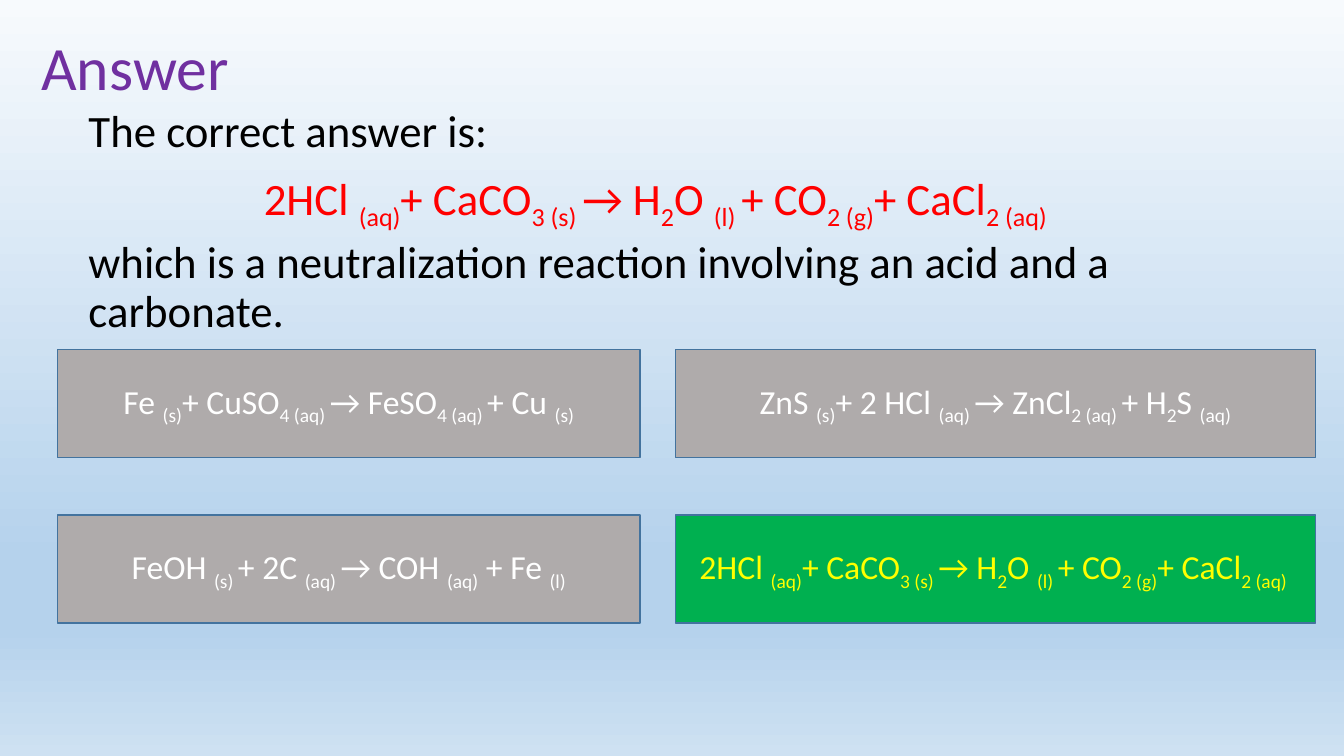
from copy import deepcopy
from dataclasses import dataclass

from pptx import Presentation
from pptx.dml.color import RGBColor
from pptx.enum import shapes, text
from pptx.oxml import ns
from pptx.util import Pt


@dataclass(frozen=True)
class Theme:
    """Hold the colours and type sizes of the slide."""
    font: str = "Calibri"
    title_size: int = 44
    body_size: int = 32
    option_size: int = 24
    title: str = "7030A0"
    body: str = "000000"
    equation: str = "FF0000"
    option_text: str = "FFFFFF"
    option_fill: str = "AFABAB"
    correct_text: str = "FFFF00"
    correct_fill: str = "00B050"
    border: str = "43739E"
    background: tuple = ((0, "F7FAFD"), (0.74, "B5D2EC"), (0.83, "B5D2EC"), (1, "CEE1F2"))


THEME = Theme()
LEFT, CENTER = text.PP_ALIGN.LEFT, text.PP_ALIGN.CENTER
ANSWER = "2HCl |(aq)|+ CaCO|3 (s) |→ H|2|O |(l) |+ CO|2 (g)|+ CaCl|2 (aq) "
OPTIONS = (
    ("Fe |(s)|+ CuSO|4 (aq) |→ FeSO|4 (aq) |+ Cu |(s)",
     "ZnS |(s)|+ 2 HCl |(aq) |→ ZnCl|2 (aq) |+ H|2|S |(aq)"),
    ("FeOH |(s) |+ 2C |(aq) |→ COH |(aq)| + Fe |(l)", ANSWER),
)
COLUMNS = ((41.04, 416.16), (482.4, 457.2))
ROW_TOP, ROW_STEP, ROW_HEIGHT = 249.84, 118.08, 77.04


def apply(target, formats):
    """Set every attribute in a dict of format values."""
    for name, value in formats.items():
        setattr(target, name, value)


def write(p, content, size, color, **formats):
    """Fill a paragraph, with every second piece between bars as subscript."""
    apply(p, formats)
    for i, piece in enumerate(content.split("|")):
        r = p.add_run()
        apply(r, {"text": piece})
        apply(r.font, {"name": THEME.font, "size": Pt(size)})
        r.font.color.rgb = RGBColor.from_string(color)
        if i % 2:
            r._r.get_or_add_rPr().set("baseline", "-25000")


def paint_background(s):
    """Give the slide its vertical gradient."""
    fill = s.background.fill
    fill.gradient()
    fill.gradient_angle = 270
    stops = s.element.find(".//" + ns.qn("a:gsLst"))
    for stop in list(stops):
        stops.append(deepcopy(stop))
    for stop, (position, color) in zip(fill.gradient_stops, THEME.background):
        stop.position = position
        stop.color.rgb = RGBColor.from_string(color)


def add_title(s, content):
    """Place and format the title."""
    sp = s.shapes.title
    apply(sp, {"left": Pt(22.32), "top": Pt(-1.44), "width": Pt(828), "height": Pt(104.4)})
    tf = sp.text_frame
    apply(tf, {"vertical_anchor": text.MSO_ANCHOR.MIDDLE, "auto_size": text.MSO_AUTO_SIZE.NONE})
    write(tf.paragraphs[0], content, THEME.title_size, THEME.title,
          alignment=LEFT, line_spacing=0.9)


def add_body(s, lines):
    """Add the explanation from (content, colour, alignment) lines."""
    tf = s.shapes.add_textbox(Pt(56.16), Pt(74.16), Pt(828), Pt(376.56)).text_frame
    tf.word_wrap = True
    for i, (content, color, alignment) in enumerate(lines):
        p = tf.add_paragraph() if i else tf.paragraphs[0]
        write(p, content, THEME.body_size, color,
              alignment=alignment, line_spacing=0.9, space_before=Pt(10))


def add_option(s, left, top, width, content):
    """Add one answer box, highlighted when it is the correct one."""
    correct = content == ANSWER
    sp = s.shapes.add_shape(shapes.MSO_SHAPE.RECTANGLE, Pt(left), Pt(top), Pt(width), Pt(ROW_HEIGHT))
    sp.shadow.inherit = False
    sp.fill.solid()
    sp.fill.fore_color.rgb = RGBColor.from_string(
        THEME.correct_fill if correct else THEME.option_fill)
    sp.line.color.rgb = RGBColor.from_string(THEME.border)
    sp.line.width = Pt(1)
    tf = sp.text_frame
    apply(tf, {"word_wrap": True, "vertical_anchor": text.MSO_ANCHOR.MIDDLE})
    write(tf.paragraphs[0], content, THEME.option_size,
          THEME.correct_text if correct else THEME.option_text, alignment=CENTER)


def main():
    """Build and save the slide."""
    prs = Presentation()
    apply(prs, {"slide_width": Pt(960), "slide_height": Pt(540)})
    s = prs.slides.add_slide(prs.slide_layouts.get_by_name("Title Only"))
    paint_background(s)
    add_title(s, "Answer")
    add_body(s, (
        ("The correct answer is:", THEME.body, LEFT),
        (ANSWER, THEME.equation, CENTER),
        ("which is a neutralization reaction involving an acid and a carbonate.",
         THEME.body, LEFT),
    ))
    for i, row in enumerate(OPTIONS):
        for (left, width), content in zip(COLUMNS, row):
            add_option(s, left, ROW_TOP + i * ROW_STEP, width, content)
    prs.save("out.pptx")


if __name__ == "__main__":
    main()
